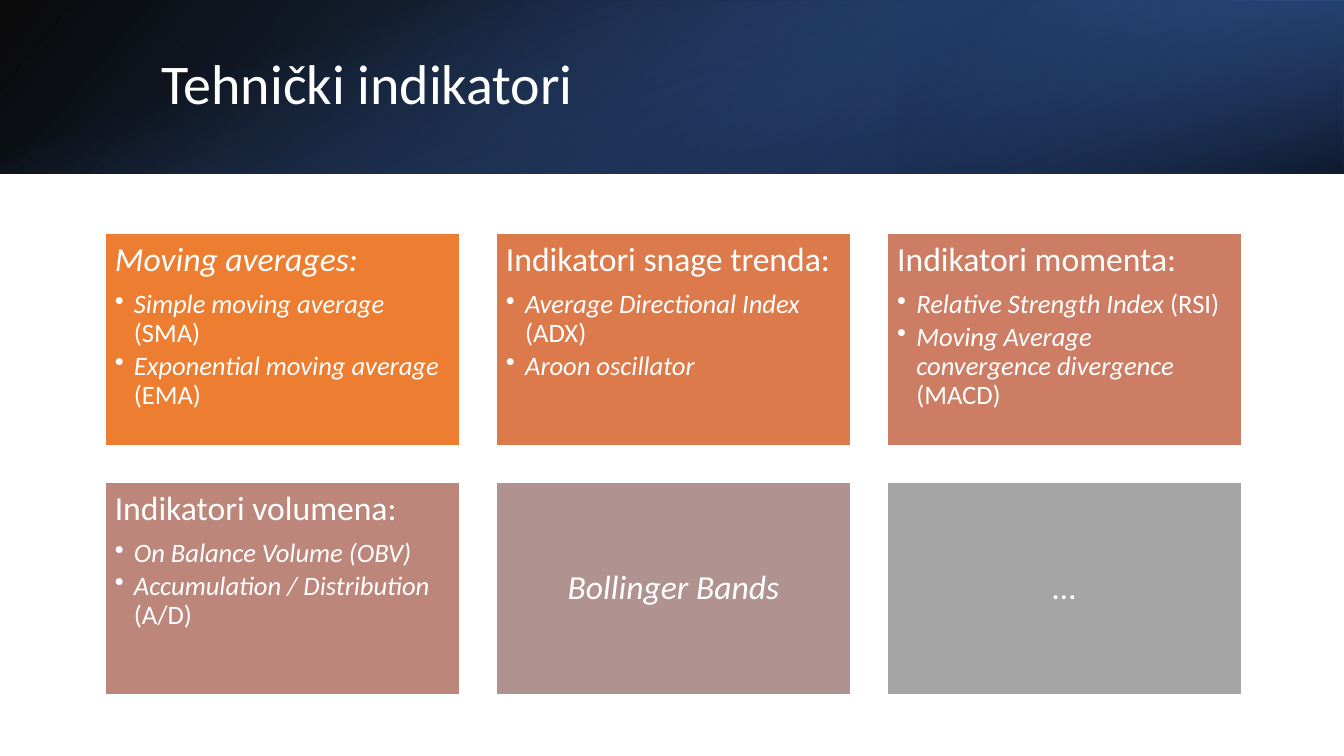
from dataclasses import dataclass

from lxml.etree import SubElement
from pptx import Presentation
from pptx.dml.color import RGBColor
from pptx.enum.shapes import MSO_SHAPE as Form
from pptx.enum.text import MSO_ANCHOR as Anchor, PP_ALIGN as Align
from pptx.oxml.ns import qn
from pptx.util import Emu, Pt

PX = 9144  # 100 px to the inch
FONT = "Calibri"

WHITE = RGBColor(0xFF, 0xFF, 0xFF)
BLACK = RGBColor(0x00, 0x00, 0x00)
NAVY = RGBColor(0x20, 0x38, 0x64)
BLUE = RGBColor(0x2F, 0x55, 0x97)
SKY = RGBColor(0x44, 0x72, 0xC4)
ORANGE = RGBColor(0xED, 0x7D, 0x31)
RUST = RGBColor(0xDC, 0x7A, 0x4B)
CORAL = RGBColor(0xCC, 0x7D, 0x64)
ROSE = RGBColor(0xBD, 0x86, 0x7B)
MAUVE = RGBColor(0xB0, 0x93, 0x91)
GRAY = RGBColor(0xA5, 0xA5, 0xA5)

WIDE, HIGH, BAND = 1333, 750, 172
LEFT, TOP, COLS = 104, 231, 3
CARD_W, CARD_H = 352, 211
STEP_X, STEP_Y = 388, 247


@dataclass
class Stop:
    pos: int  # percent
    color: RGBColor
    alpha: int = 100  # percent


@dataclass
class Layer:
    box: tuple[int, int, int, int]
    turn: int
    flip: bool
    angle: int  # clockwise
    stops: tuple[Stop, Stop]


@dataclass
class Card:
    fill: RGBColor
    head: str
    slant: bool = False
    items: tuple[tuple[str, str], ...] = ()  # italic part, upright part


LAYERS = [
    Layer((0, 0, WIDE, BAND), 0, True, 140,
          (Stop(0, BLACK, 96), Stop(100, BLUE))),
    Layer((889, 0, 444, BAND), 180, True, 320,
          (Stop(19, NAVY, 68), Stop(100, SKY, 79))),
    Layer((580, -580, BAND, WIDE), 90, False, 340,
          (Stop(23, SKY, 0), Stop(99, BLACK, 74))),
]

CARDS = [
    Card(ORANGE, "Moving averages:", True,
         (("Simple moving average ", "(SMA)"),
          ("Exponential moving average ", "(EMA)"))),
    Card(RUST, "Indikatori snage trenda:", False,
         (("Average Directional Index", " (ADX)"),
          ("Aroon oscillator", ""))),
    Card(CORAL, "Indikatori momenta:", False,
         (("Relative Strength Index ", "(RSI)"),
          ("Moving Average convergence divergence", " (MACD)"))),
    Card(ROSE, "Indikatori volumena:", False,
         (("On Balance Volume (OBV)", ""),
          ("Accumulation / Distribution ", "(A/D)"))),
    Card(MAUVE, "Bollinger Bands", True),
    Card(GRAY, "...", True),
]


def add_rect(slide, x: int, y: int, w: int, h: int):
    rect = slide.shapes.add_shape(
        Form.RECTANGLE, *(Emu(n * PX) for n in (x, y, w, h)))
    rect.shadow.inherit = False
    return rect


def style(para, size: int, after: float = 0) -> None:
    para.line_spacing = 0.9
    para.space_after = Pt(after)
    para.font.name = FONT
    para.font.size = Pt(size)
    para.font.color.rgb = WHITE


def add_run(para, text: str, slant: bool) -> None:
    run = para.add_run()
    run.text = text
    run.font.italic = slant


def add_layer(slide, layer: Layer) -> None:
    rect = add_rect(slide, *layer.box)
    rect.rotation = layer.turn
    if layer.flip:
        rect._element.spPr.xfrm.set("flipH", "1")
    rect.line.fill.background()
    rect.fill.gradient()
    rect.fill.gradient_angle = 360 - layer.angle
    for mark, stop in zip(rect.fill.gradient_stops, layer.stops):
        mark.position = stop.pos / 100
        mark.color.rgb = stop.color
    for tint, stop in zip(rect._element.spPr.iter(qn("a:srgbClr")), layer.stops):
        SubElement(tint, qn("a:alpha")).set("val", str(stop.alpha * 1000))


def add_item(frame, slant: str, plain: str) -> None:
    para = frame.add_paragraph()
    para.alignment = Align.LEFT
    props = para._p.get_or_add_pPr()
    props.set("marL", str(19 * PX))
    props.set("indent", str(-19 * PX))
    SubElement(props, qn("a:buChar")).set("char", "•")
    style(para, 19, 2.85)
    add_run(para, slant, True)
    if plain:
        add_run(para, plain, False)


def add_card(slide, spot: int, card: Card) -> None:
    row, col = divmod(spot, COLS)
    rect = add_rect(slide, LEFT + col * STEP_X, TOP + row * STEP_Y, CARD_W, CARD_H)
    rect.fill.solid()
    rect.fill.fore_color.rgb = card.fill
    rect.line.color.rgb = WHITE
    rect.line.width = Pt(1)
    frame = rect.text_frame
    frame.word_wrap = True
    frame.margin_left = frame.margin_right = Emu(10 * PX)
    frame.margin_top = frame.margin_bottom = Emu(10 * PX)
    frame.vertical_anchor = Anchor.TOP if card.items else Anchor.MIDDLE
    head = frame.paragraphs[0]
    head.alignment = Align.LEFT if card.items else Align.CENTER
    style(head, 24, 8.4)
    add_run(head, card.head, card.slant)
    for slant, plain in card.items:
        add_item(frame, slant, plain)


def set_title(slide, text: str) -> None:
    title = slide.shapes.title
    title.left, title.top, title.width, title.height = (
        Emu(n * PX) for n in (150, 38, 1098, 96))
    title.text_frame.vertical_anchor = Anchor.MIDDLE
    title.text_frame.text = text
    para = title.text_frame.paragraphs[0]
    para.alignment = Align.LEFT
    style(para, 40)
    # Lift the title above the band
    slide.shapes._spTree.append(title._element)


def main() -> None:
    deck = Presentation()
    deck.slide_width, deck.slide_height = Emu(WIDE * PX), Emu(HIGH * PX)
    slide = deck.slides.add_slide(deck.slide_layouts[5])

    # Header band
    for layer in LAYERS:
        add_layer(slide, layer)
    set_title(slide, "Tehnički indikatori")

    # Indicator cards
    for spot, card in enumerate(CARDS):
        add_card(slide, spot, card)

    deck.save("out.pptx")


if __name__ == "__main__":
    main()
